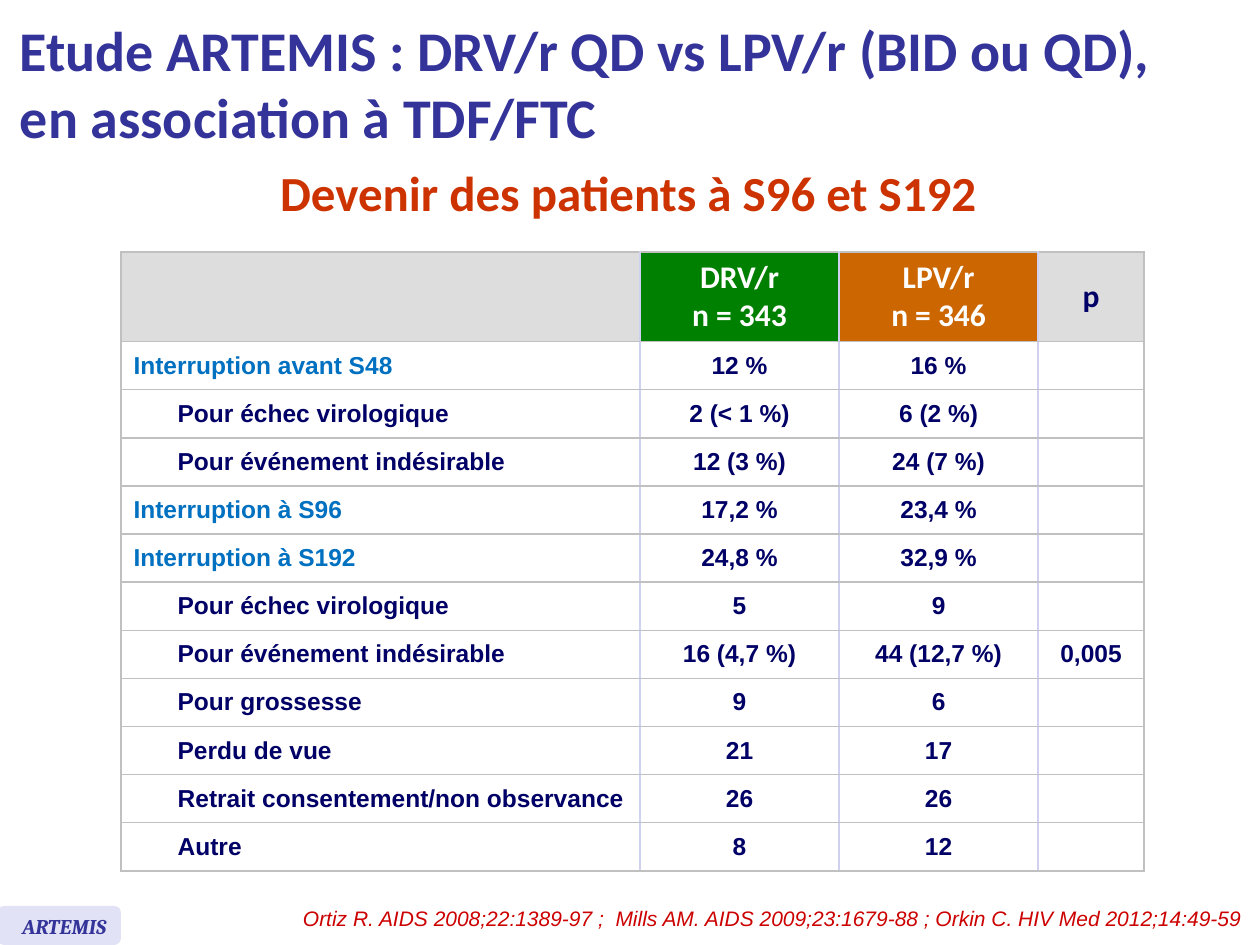
from dataclasses import dataclass

from lxml import etree
from pptx import Presentation
from pptx.dml.color import RGBColor
from pptx.enum.shapes import MSO_SHAPE
from pptx.enum.text import MSO_ANCHOR, PP_ALIGN
from pptx.oxml.ns import qn
from pptx.util import Inches, Pt

LEFT, CENTER, RIGHT = PP_ALIGN.LEFT, PP_ALIGN.CENTER, PP_ALIGN.RIGHT
TOP, MIDDLE = MSO_ANCHOR.TOP, MSO_ANCHOR.MIDDLE
ROUNDED = MSO_SHAPE.ROUNDED_RECTANGLE
GRID_COLUMNS, GRID_ROWS = 100, 75

COLUMN_WIDTHS = (3.5, 37.7, 15.8, 15.8, 8.4)
HEADER_HEIGHT, ROW_HEIGHT = 7.1, 3.82
OUTCOMES = (
    (0, "Interruption avant S48", "12 %", "16 %", ""),
    (1, "Pour échec virologique", "2 (< 1 %)", "6 (2 %)", ""),
    (1, "Pour événement indésirable", "12 (3 %)", "24 (7 %)", ""),
    (0, "Interruption à S96", "17,2 %", "23,4 %", ""),
    (0, "Interruption à S192", "24,8 %", "32,9 %", ""),
    (1, "Pour échec virologique", "5", "9", ""),
    (1, "Pour événement indésirable", "16 (4,7 %)", "44 (12,7 %)", "0,005"),
    (1, "Pour grossesse", "9", "6", ""),
    (1, "Perdu de vue", "21", "17", ""),
    (1, "Retrait consentement/non observance", "26", "26", ""),
    (1, "Autre", "8", "12", ""),
)


@dataclass(frozen=True)
class Theme:
    """Colours, fonts and type sizes of the slide."""

    title: str = "333399"
    subtitle: str = "CC3300"
    reference: str = "CC0000"
    badge: str = "E2E2F6"
    body: str = "000066"
    group: str = "0070C0"
    white: str = "FFFFFF"
    header: str = "DDDDDD"
    darunavir: str = "008000"
    lopinavir: str = "CC6600"
    outer_line: str = "C0C0C0"
    inner_line: str = "D0D0F0"
    heading_font: str = "Calibri"
    body_font: str = "Arial"
    badge_font: str = "Cambria"
    title_size: int = 32
    subtitle_size: int = 28
    header_size: int = 18
    body_size: int = 14
    small_size: int = 12


def write_text(frame, text, *, size, font, color, bold=False, italic=False, align=LEFT):
    """Write one formatted paragraph into a text frame."""
    paragraph = frame.paragraphs[0]
    paragraph.text = text
    paragraph.alignment = align
    for run in paragraph.runs:
        run.font.size, run.font.name = Pt(size), font
        run.font.bold, run.font.italic = bold, italic
        run.font.color.rgb = RGBColor.from_string(color)
    if not text:
        etree.SubElement(paragraph._p, qn("a:endParaRPr"), sz=str(size * 100))


def set_borders(cell, **colors):
    """Draw the cell sides L, R, T and B, leaving out a side whose colour is None."""
    properties = cell._tc.get_or_add_tcPr()
    for side, color in colors.items():
        line = etree.SubElement(properties, qn(f"a:ln{side}"), w=str(Pt(1)))
        if color:
            fill = etree.SubElement(line, qn("a:solidFill"))
            etree.SubElement(fill, qn("a:srgbClr"), val=color)
        else:
            etree.SubElement(line, qn("a:noFill"))


class SlideBuilder:
    """Holds the theme and the current slide, and places elements on its grid."""

    def __init__(self, presentation, theme):
        """Add a blank slide to the presentation."""
        self.theme = theme
        self.unit_x = presentation.slide_width / GRID_COLUMNS
        self.unit_y = presentation.slide_height / GRID_ROWS
        self.slide = presentation.slides.add_slide(presentation.slide_layouts[6])

    def place(self, left, top, width, height):
        """Turn grid columns and rows into slide lengths."""
        return (round(left * self.unit_x), round(top * self.unit_y),
                round(width * self.unit_x), round(height * self.unit_y))

    def text(self, area, text, anchor=TOP, wrap=True, **style):
        """Add a text box."""
        frame = self.slide.shapes.add_textbox(*self.place(*area)).text_frame
        frame.word_wrap, frame.vertical_anchor = wrap, anchor
        write_text(frame, text, **style)

    def rounded_box(self, area, color):
        """Add a filled rounded rectangle without outline."""
        shape = self.slide.shapes.add_shape(ROUNDED, *self.place(*area))
        shape.adjustments[0] = 0.17
        shape.shadow.inherit = False
        shape.fill.solid()
        shape.fill.fore_color.rgb = RGBColor.from_string(color)
        shape.line.fill.background()

    def cell(self, cell, text, fill, borders, **style):
        """Fill, frame and write one table cell."""
        cell.vertical_anchor = MIDDLE
        set_borders(cell, **borders)
        cell.fill.solid()
        cell.fill.fore_color.rgb = RGBColor.from_string(fill)
        write_text(cell.text_frame, text, bold=True, **style)

    def outcome_table(self, left, top):
        """Add the table of patient outcomes by treatment arm."""
        theme = self.theme
        last = len(COLUMN_WIDTHS) - 1
        height = HEADER_HEIGHT + ROW_HEIGHT * len(OUTCOMES)
        area = self.place(left, top, sum(COLUMN_WIDTHS), height)
        table = self.slide.shapes.add_table(len(OUTCOMES) + 1, last + 1, *area).table
        table.first_row = table.horz_banding = False
        for column, width in zip(table.columns, COLUMN_WIDTHS):
            column.width = round(width * self.unit_x)
        for index, row in enumerate(table.rows):
            row.height = round((ROW_HEIGHT if index else HEADER_HEIGHT) * self.unit_y)

        header = (0, "", "DRV/r\nn = 343", "LPV/r\nn = 346", "p")
        header_fills = (theme.header, theme.header, theme.darunavir, theme.lopinavir, theme.header)
        for row, (level, label, *values) in enumerate((header, *OUTCOMES)):
            texts = ("", label, *values) if level else (label, "", *values)
            if not level:
                table.cell(row, 0).merge(table.cell(row, 1))
            for column, text in enumerate(texts):
                sides = dict(
                    L=(theme.outer_line, None)[column] if column < 2 else theme.inner_line,
                    R=theme.outer_line if column == last else theme.inner_line if column or not level else None,
                    T=theme.outer_line, B=theme.outer_line)
                color = theme.body
                if row == 0 and column in (2, 3):
                    color = theme.white
                elif column == 0:
                    color = theme.group
                self.cell(
                    table.cell(row, column), text, theme.white if row else header_fills[column], sides,
                    size=theme.body_size if row else theme.header_size,
                    font=theme.body_font if row else theme.heading_font,
                    color=color, align=CENTER if column > 1 else LEFT)


def main():
    """Build and save the slide."""
    presentation = Presentation()
    presentation.slide_width, presentation.slide_height = Inches(10), Inches(7.5)
    theme = Theme()
    builder = SlideBuilder(presentation, theme)
    builder.outcome_table(9.6, 20)
    builder.text((20.9, 12.4, 57.9, 5.7), "Devenir des patients à S96 et S192", wrap=False,
                 size=theme.subtitle_size, font=theme.heading_font, color=theme.subtitle,
                 bold=True, align=CENTER)
    builder.text((13.2, 71.4, 86.4, 3),
                 "Ortiz R. AIDS 2008;22:1389-97 ;  Mills AM. AIDS 2009;23:1679-88 ; Orkin C. HIV Med 2012;14:49-59",
                 size=theme.small_size, font=theme.body_font, color=theme.reference,
                 italic=True, align=RIGHT)
    builder.rounded_box((-0.2, 71.9, 9.8, 3.1), theme.badge)
    builder.text((0.8, 72, 9.3, 3), "ARTEMIS", size=theme.small_size, font=theme.badge_font,
                 color=theme.title, bold=True, italic=True)
    builder.text((0.6, 0.5, 99.4, 12.1),
                 "Etude ARTEMIS : DRV/r QD vs LPV/r (BID ou QD),\nen association à TDF/FTC",
                 anchor=MIDDLE, size=theme.title_size, font=theme.heading_font,
                 color=theme.title, bold=True)
    presentation.save("out.pptx")


if __name__ == "__main__":
    main()
